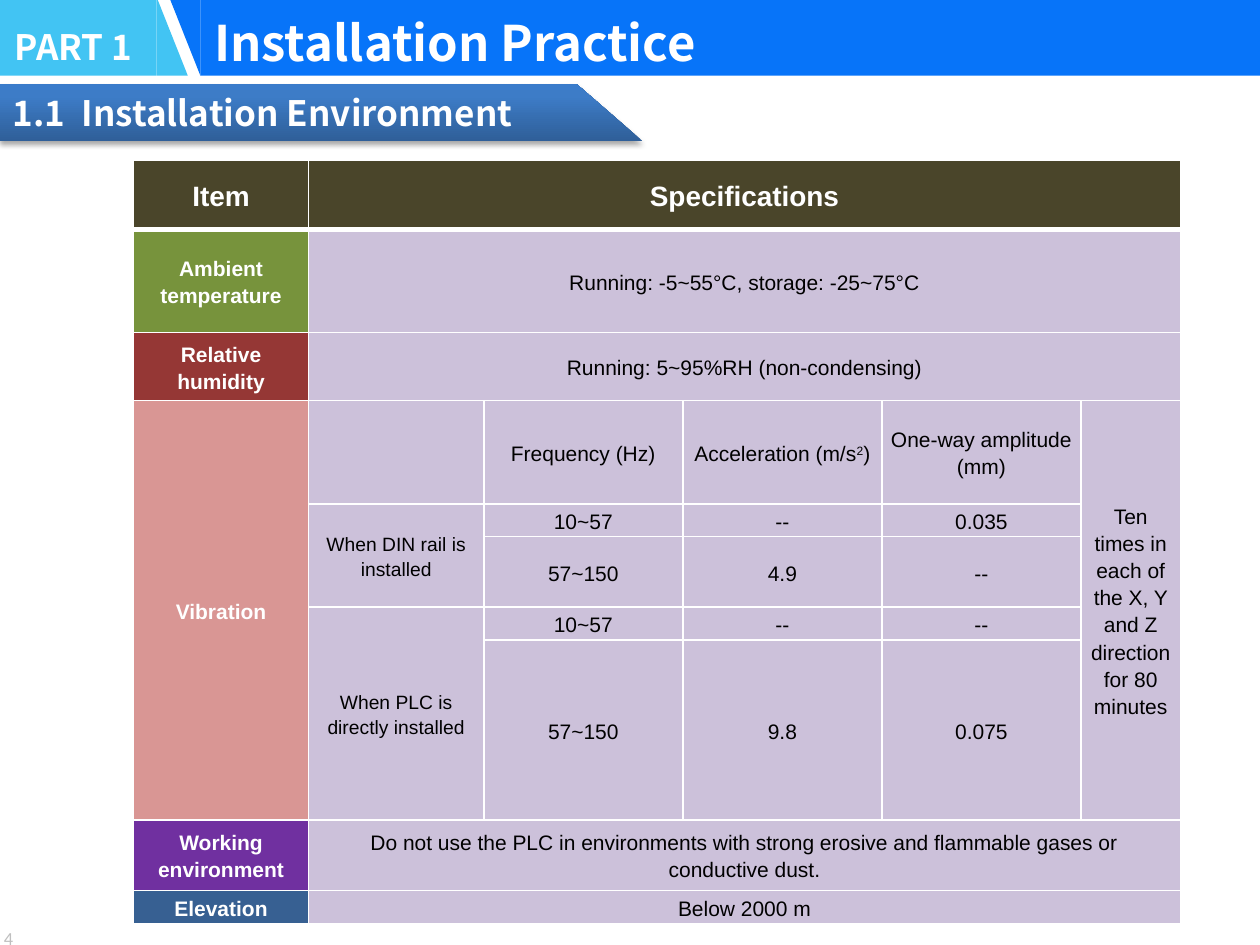
from pptx import Presentation
from pptx.dml.color import RGBColor
from pptx.enum.shapes import MSO_SHAPE
from pptx.enum.text import MSO_ANCHOR, MSO_AUTO_SIZE, PP_ALIGN
from pptx.oxml import parse_xml
from pptx.oxml.ns import nsdecls, qn
from pptx.util import Inches, Pt

RECTANGLE, TRIANGLE = MSO_SHAPE.RECTANGLE, MSO_SHAPE.RIGHT_TRIANGLE
TOP, MIDDLE = MSO_ANCHOR.TOP, MSO_ANCHOR.MIDDLE
LEFT, CENTER = PP_ALIGN.LEFT, PP_ALIGN.CENTER

WHITE = RGBColor(0xFF, 0xFF, 0xFF)
BLACK = RGBColor(0x00, 0x00, 0x00)
GRAY = RGBColor(0xBF, 0xBF, 0xBF)
CYAN = RGBColor(0x00, 0xB0, 0xF0)
BLUE = RGBColor(0x07, 0x74, 0xF9)
HEADER_FILL = RGBColor(0x4A, 0x45, 0x2A)
LILAC = RGBColor(0xCC, 0xC1, 0xDA)
SECTION_STOPS = [(0, RGBColor(0x2F, 0x5F, 0x99)),
                 (80, RGBColor(0x3D, 0x7C, 0xC7)),
                 (100, RGBColor(0x3A, 0x7C, 0xCB))]

HEADING_FONT = "Noto Sans CJK SC"
TABLE_FONT = "Arial"
BAND_TOP, BAND_HEIGHT = -0.03, 0.63

COLUMN_WIDTHS = [1.39, 1.39, 1.58, 1.58, 1.58, 0.79]
ROW_HEIGHTS = [0.55, 0.82, 0.54, 0.82, 0.26, 0.56, 0.26, 1.43, 0.56, 0.26]

# Row: (item, fill, specification that spans the remaining columns)
SPECIFICATIONS = {
    0: ("Item", HEADER_FILL, "Specifications"),
    1: ("Ambient temperature", RGBColor(0x77, 0x93, 0x3C),
        "Running: -5~55°C, storage: -25~75°C"),
    2: ("Relative humidity", RGBColor(0x95, 0x37, 0x35),
        "Running: 5~95%RH (non-condensing)"),
    8: ("Working environment", RGBColor(0x70, 0x30, 0xA0),
        "Do not use the PLC in environments with strong erosive and "
        "flammable gases or conductive dust."),
    9: ("Elevation", RGBColor(0x37, 0x60, 0x92), "Below 2000 m"),
}
VIBRATION_FILL = RGBColor(0xD9, 0x96, 0x94)
VIBRATION_FIRST, VIBRATION_LAST = 3, 7
VIBRATION_VALUES = [
    ["Frequency (Hz)", [("Acceleration (m/s", 0), ("2", 30), (")", 0)],
     "One-way amplitude (mm)"],
    ["10~57", "--", "0.035"],
    ["57~150", "4.9", "--"],
    ["10~57", "--", "--"],
    ["57~150", "9.8", "0.075"],
]
INSTALLATIONS = {4: "When DIN rail is installed",
                 6: "When PLC is directly installed"}


def write_text(frame, text, *, size, font=HEADING_FONT, color=WHITE, bold=True,
               align=LEFT, anchor=TOP, line_spacing=None, wrap=True):
    """Write a string, or a list of (string, raised percent) pieces."""
    frame.word_wrap = wrap
    frame.vertical_anchor = anchor
    paragraph = frame.paragraphs[0]
    paragraph.alignment = align
    paragraph.line_spacing = line_spacing
    for piece, raised in [(text, 0)] if isinstance(text, str) else text:
        run = paragraph.add_run()
        run.text = piece
        run.font.size = Pt(size)
        run.font.name = font
        run.font.bold = bold
        run.font.color.rgb = color
        if raised:
            run._r.get_or_add_rPr().set("baseline", str(raised * 1000))


def add_text_box(slide, text, left, top, width, height, **text_format):
    box = slide.shapes.add_textbox(*map(Inches, (left, top, width, height)))
    write_text(box.text_frame, text, **text_format)
    return box


def add_band_part(slide, kind, left, width, color, opacity=100, rotation=0):
    part = slide.shapes.add_shape(
        kind, *map(Inches, (left, BAND_TOP, width, BAND_HEIGHT)))
    part.shadow.inherit = False
    part.line.fill.background()
    part.fill.solid()
    part.fill.fore_color.rgb = color
    part.rotation = rotation
    if opacity < 100:
        srgb = next(part.element.spPr.iter(qn("a:srgbClr")))
        srgb.append(parse_xml(f'<a:alpha {nsdecls("a")} val="{opacity * 1000}"/>'))


def add_title(slide, text):
    title = slide.shapes.title
    title.left, title.top = Inches(1.6), Inches(0.05)
    title.width, title.height = Inches(5.96), Inches(0.57)
    write_text(title.text_frame, text, size=28)
    title.text_frame.auto_size = MSO_AUTO_SIZE.NONE
    # Bring the title in front of the band
    title.element.getparent().append(title.element)


def add_section_banner(slide, number, heading):
    builder = slide.shapes.build_freeform(Inches(0), Inches(0.67), scale=1.0)
    corners = [(4.58, 0.67), (5.1, 1.12), (0, 1.12)]
    builder.add_line_segments([(Inches(x), Inches(y)) for x, y in corners])
    banner = builder.convert_to_shape()
    banner.line.fill.background()

    # Three-stop gradient that runs upwards
    banner.fill.gradient()
    banner.fill.gradient_angle = 90
    properties = banner.element.spPr
    stops = next(properties.iter(qn("a:gsLst")))
    for stop in list(stops):
        stops.remove(stop)
    for position, color in SECTION_STOPS:
        stops.append(parse_xml(
            f'<a:gs {nsdecls("a")} pos="{position * 1000}">'
            f'<a:srgbClr val="{color}"/></a:gs>'))

    # Soft shadow below
    banner.shadow.inherit = False
    properties.find(qn("a:effectLst")).append(parse_xml(
        f'<a:outerShdw {nsdecls("a")} blurRad="{Pt(3.1)}" dist="{Pt(1.8)}" '
        'dir="5400000" rotWithShape="0"><a:srgbClr val="000000">'
        '<a:alpha val="35000"/></a:srgbClr></a:outerShdw>'))

    # Number and heading, parted by a tab stop
    paragraph = banner.text_frame.paragraphs[0]
    paragraph._p.get_or_add_pPr().append(parse_xml(
        f'<a:tabLst {nsdecls("a")}><a:tab pos="{Inches(0.55)}" algn="l"/></a:tabLst>'))
    write_text(banner.text_frame, f"{number}\t{heading}", size=20, anchor=MIDDLE)


def style_cell(cell, fill, top=1, bottom=1):
    properties = cell._tc.get_or_add_tcPr()
    for side, width in (("L", 1), ("R", 1), ("T", top), ("B", bottom)):
        properties.append(parse_xml(
            f'<a:ln{side} {nsdecls("a")} w="{Pt(width)}"><a:solidFill>'
            f'<a:srgbClr val="{WHITE}"/></a:solidFill></a:ln{side}>'))
    cell.fill.solid()
    cell.fill.fore_color.rgb = fill
    cell.margin_left = cell.margin_right = Inches(0.07)
    cell.margin_top = cell.margin_bottom = 0
    cell.vertical_anchor = MIDDLE


def write_cell(cell, text, size=12, color=BLACK, bold=False):
    write_text(cell.text_frame, text, size=size, font=TABLE_FONT, color=color,
               bold=bold, align=CENTER, anchor=MIDDLE, line_spacing=1.15)
    cell.vertical_anchor = MIDDLE


def add_specification_table(slide):
    table = slide.shapes.add_table(
        len(ROW_HEIGHTS), len(COLUMN_WIDTHS), Inches(1.06), Inches(1.27),
        Inches(sum(COLUMN_WIDTHS)), Inches(sum(ROW_HEIGHTS))).table
    for column, width in zip(table.columns, COLUMN_WIDTHS):
        column.width = Inches(width)
    last = len(COLUMN_WIDTHS) - 1

    # Fills and borders
    for r, height in enumerate(ROW_HEIGHTS):
        table.rows[r].height = Inches(height)
        item_fill = SPECIFICATIONS[r][1] if r in SPECIFICATIONS else VIBRATION_FILL
        for c in range(last + 1):
            fill = item_fill if c == 0 or r == 0 else LILAC
            style_cell(table.cell(r, c), fill, top=3 if r == 1 else 1,
                       bottom=3 if r == 0 else 1)

    # Rows with one specification
    for r, (item, _, specification) in SPECIFICATIONS.items():
        table.cell(r, 1).merge(table.cell(r, last))
        header = {"size": 16, "color": WHITE, "bold": True} if r == 0 else {}
        write_cell(table.cell(r, 0), item, size=16 if r == 0 else 12,
                   color=WHITE, bold=True)
        write_cell(table.cell(r, 1), specification, **header)

    # Vibration block
    for c in (0, last):
        table.cell(VIBRATION_FIRST, c).merge(table.cell(VIBRATION_LAST, c))
    write_cell(table.cell(VIBRATION_FIRST, 0), "Vibration", color=WHITE, bold=True)
    write_cell(table.cell(VIBRATION_FIRST, last),
               "Ten times in each of the X, Y and Z direction for 80 minutes")
    for r, installation in INSTALLATIONS.items():
        table.cell(r, 1).merge(table.cell(r + 1, 1))
        write_cell(table.cell(r, 1), installation, size=11)
    for r, values in enumerate(VIBRATION_VALUES, VIBRATION_FIRST):
        for c, value in enumerate(values, 2):
            write_cell(table.cell(r, c), value)


def main():
    presentation = Presentation()
    presentation.slide_width, presentation.slide_height = Inches(10), Inches(7.5)
    slide = presentation.slides.add_slide(presentation.slide_layouts[5])

    # Page number
    page_number = add_text_box(slide, "4", 0, 7.31, 0.38, 0.28, size=10.5,
                               font="Calibri", color=GRAY, bold=False, wrap=False)
    page_number.text_frame.margin_left = Inches(0.03)

    # Title band
    add_band_part(slide, RECTANGLE, 0, 1.24, CYAN, opacity=74)
    add_band_part(slide, RECTANGLE, 1.59, 8.41, BLUE)
    add_band_part(slide, TRIANGLE, 1.24, 0.25, CYAN, opacity=74)
    add_band_part(slide, TRIANGLE, 1.34, 0.25, BLUE, rotation=180)
    add_title(slide, "Installation Practice")
    add_text_box(slide, "PART 1", 0.02, 0.15, 1.4, 0.74, size=20)

    add_section_banner(slide, "1.1", "Installation Environment")
    add_specification_table(slide)
    presentation.save("out.pptx")


if __name__ == "__main__":
    main()
